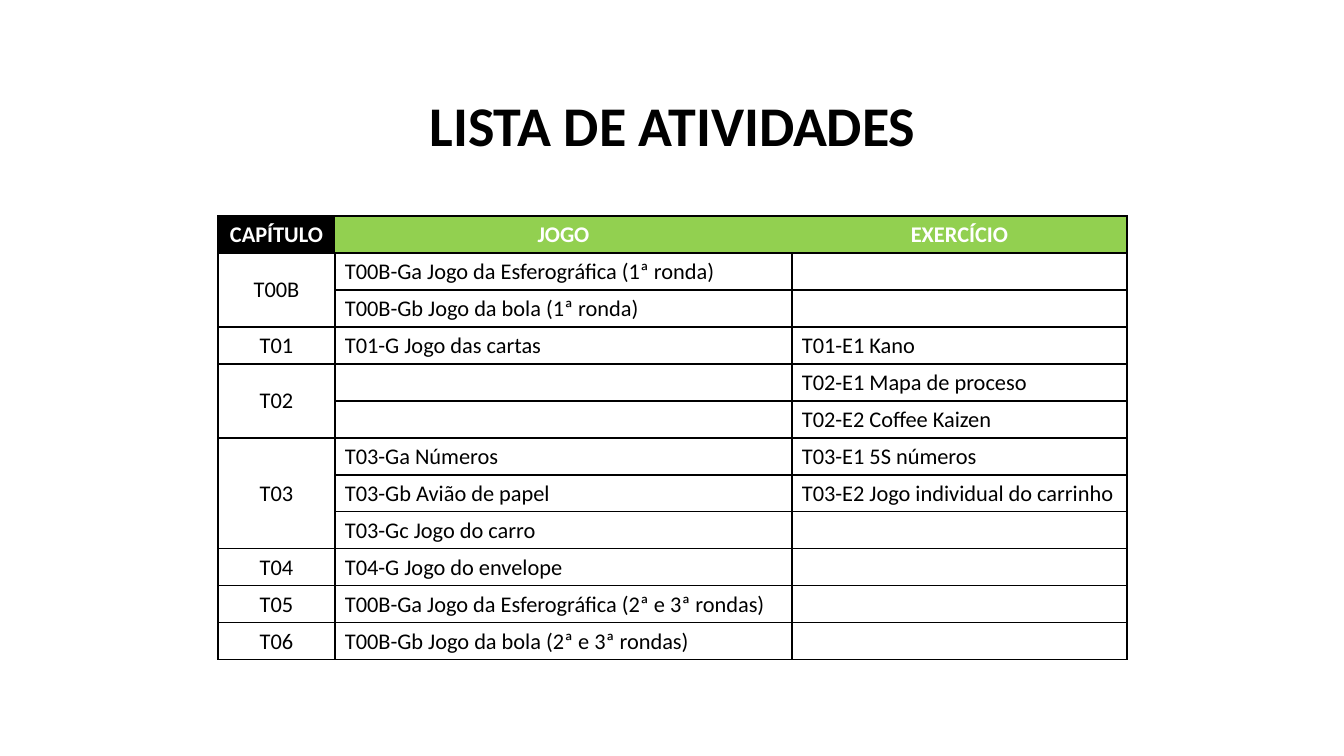
from pptx import Presentation, util as u
from pptx.dml.color import RGBColor
from pptx.enum import text
from pptx.oxml.xmlchemy import OxmlElement

PX = 914400 / 100.8
THEME = dict(font="Calibri", title=40, body=16, line=1,
             black="000000", white="FFFFFF", green="92D050")


def px(n):
    return u.Emu(round(n * PX))


def add_text(p, words, size, color, bold, align):
    p.alignment = align
    r = p.add_run()
    r.text = words
    r.font.name, r.font.size, r.font.bold = THEME["font"], u.Pt(size), bold
    r.font.color.rgb = RGBColor.from_string(THEME[color])


prs = Presentation()
prs.slide_width, prs.slide_height = px(1344), px(756)
s = prs.slides.add_slide(prs.slide_layouts[6])
CENTER, LEFT = text.PP_ALIGN.CENTER, text.PP_ALIGN.LEFT

# Title
tf = s.shapes.add_textbox(px(253), px(86), px(839), px(78)).text_frame
tf.word_wrap = True
add_text(tf.paragraphs[0], "LISTA DE ATIVIDADES", THEME["title"], "black", True, CENTER)

# Activities: chapter, then its (game, exercise) rows
header = ("CAPÍTULO", "JOGO", "EXERCÍCIO")
chapters = [
    ("T00B", [("T00B-Ga Jogo da Esferográfica (1ª ronda)", ""),
              ("T00B-Gb Jogo da bola (1ª ronda)", "")]),
    ("T01", [("T01-G Jogo das cartas", "T01-E1 Kano")]),
    ("T02", [("", "T02-E1 Mapa de proceso"),
             ("", "T02-E2 Coffee Kaizen")]),
    ("T03", [("T03-Ga Números", "T03-E1 5S números"),
             ("T03-Gb Avião de papel", "T03-E2 Jogo individual do carrinho"),
             ("T03-Gc Jogo do carro", "")]),
    ("T04", [("T04-G Jogo do envelope", "")]),
    ("T05", [("T00B-Ga Jogo da Esferográfica (2ª e 3ª rondas)", "")]),
    ("T06", [("T00B-Gb Jogo da bola (2ª e 3ª rondas)", "")]),
]
rows, spans = [header], []
for chapter, activities in chapters:
    spans.append((len(rows), len(rows) + len(activities) - 1))
    for i, activity in enumerate(activities):
        rows.append(("" if i else chapter, *activity))

# Table grid
widths, row_height = (117, 457, 335), 37
table = s.shapes.add_table(len(rows), len(widths), px(218), px(216), px(sum(widths)),
                           px(row_height * len(rows))).table
table.first_row = table.horz_banding = False
for column, width in zip(table.columns, widths):
    column.width = px(width)
for row in table.rows:
    row.height = px(row_height)

# Cells
for i, row in enumerate(rows):
    for j, words in enumerate(row):
        is_header = i == 0
        cell = table.cell(i, j)
        cell.vertical_anchor = text.MSO_ANCHOR.MIDDLE
        cell.margin_left = cell.margin_right = px(10)
        cell.margin_top = cell.margin_bottom = px(4)
        fill = ("black" if j == 0 else "green") if is_header else "white"
        cell.fill.solid()
        cell.fill.fore_color.rgb = RGBColor.from_string(THEME[fill])
        p = cell.text_frame.paragraphs[0]
        if words:
            add_text(p, words, THEME["body"], "white" if is_header else "black",
                     is_header, CENTER if is_header or j == 0 else LEFT)
        else:
            end = OxmlElement("a:endParaRPr")
            end.set("sz", str(THEME["body"] * 100))
            p._p.append(end)

        # Borders: the header has no inner vertical lines
        tcPr = cell._tc.get_or_add_tcPr()
        for k, side in enumerate("LRTB"):
            inner = side == "L" and j > 0 or side == "R" and j < len(widths) - 1
            ln = OxmlElement("a:ln" + side)
            ln.set("w", str(u.Pt(THEME["line"])))
            if is_header and inner:
                ln.append(OxmlElement("a:noFill"))
            else:
                solid, color = OxmlElement("a:solidFill"), OxmlElement("a:srgbClr")
                color.set("val", THEME["black"])
                solid.append(color)
                ln.append(solid)
            tcPr.insert(k, ln)

# Chapters spanning several rows
for first, last in spans:
    if last > first:
        table.cell(first, 0).merge(table.cell(last, 0))

prs.save("out.pptx")
